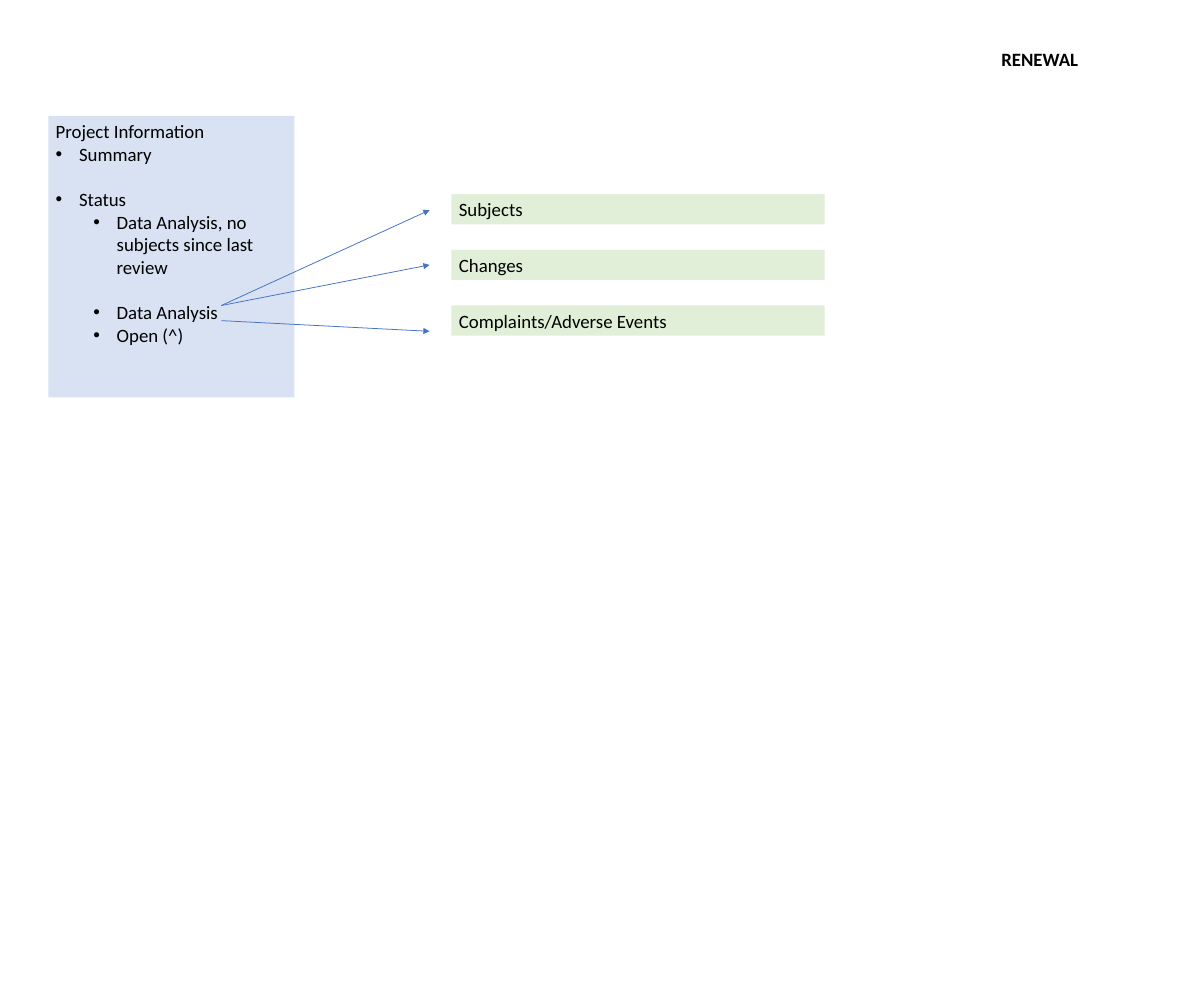
from lxml.etree import SubElement
from pptx import Presentation
from pptx.dml.color import RGBColor
from pptx.enum.shapes import MSO_CONNECTOR, MSO_SHAPE
from pptx.enum.text import MSO_ANCHOR, MSO_AUTO_SIZE, PP_ALIGN
from pptx.oxml.ns import qn
from pptx.util import Cm, Pt

THEME = {
    "font": "Calibri",
    "size": 18,
    "line_height": 22,
    "text": "000000",
    "project": "D8E2F3",
    "section": "E1EFD8",
    "arrow": "4472C4",
}

TITLE = "RENEWAL"
# text, bullet level (None = no bullet), one line of space above
PROJECT = [
    ("Project Information", None, False),
    ("Summary", 0, False),
    ("Status", 0, True),
    ("Data Analysis, no subjects since last review", 1, False),
    ("Data Analysis", 1, True),
    ("Open (^)", 1, False),
]
SECTIONS = ["Subjects", "Changes", "Complaints/Adverse Events"]

# All lengths in centimetres
SLIDE = (40.64, 33.78)
TITLE_BOX = (33.55, 1.47, 3.12, 1.02)
PROJECT_BOX = (1.63, 3.91, 8.31, 9.5)
SECTION_BOX = (15.24, 6.55, 12.6, 1.02)
SECTION_STEP = 1.88
ARROW_X = (7.47, 14.5)
ARROW_Y = [(10.31, 7.09), (10.31, 8.94), (10.82, 11.18)]
HANGING, LEVEL_INDENT = 0.79, 1.27


def color(name):
    return RGBColor.from_string(THEME[name])


def add_bullet(p, level):
    p.level = level
    pPr = p._p.get_or_add_pPr()
    pPr.set("marL", str(Cm(HANGING + level * LEVEL_INDENT)))
    pPr.set("indent", str(-Cm(HANGING)))
    SubElement(pPr, qn("a:buFont"), typeface="Arial")
    SubElement(pPr, qn("a:buChar"), char="•")


def write(p, text, bold=False, level=None, gap=False):
    p.alignment = PP_ALIGN.LEFT
    p.space_before = Pt(THEME["line_height"] if gap else 0)
    if level is not None:
        add_bullet(p, level)
    r = p.add_run()
    r.text = text
    r.font.name = THEME["font"]
    r.font.size = Pt(THEME["size"])
    r.font.bold = bold
    r.font.color.rgb = color("text")


def prepare_frame(tf, wrap=True):
    tf.word_wrap = wrap
    tf.auto_size = MSO_AUTO_SIZE.NONE
    tf.vertical_anchor = MSO_ANCHOR.TOP
    tf.margin_left = tf.margin_right = Cm(0.25)
    tf.margin_top = tf.margin_bottom = Cm(0.13)


def add_title(s):
    sp = s.shapes.title
    sp.left, sp.top, sp.width, sp.height = map(Cm, TITLE_BOX)
    prepare_frame(sp.text_frame, wrap=False)
    write(sp.text_frame.paragraphs[0], TITLE, bold=True)


def add_box(s, box, fill, lines):
    sp = s.shapes.add_shape(MSO_SHAPE.RECTANGLE, *map(Cm, box))
    sp.shadow.inherit = False
    sp.fill.solid()
    sp.fill.fore_color.rgb = color(fill)
    sp.line.fill.background()
    tf = sp.text_frame
    prepare_frame(tf)
    for i, (text, level, gap) in enumerate(lines):
        p = tf.add_paragraph() if i else tf.paragraphs[0]
        write(p, text, level=level, gap=gap)


def add_arrow(s, y1, y2):
    x1, x2 = ARROW_X
    line = s.shapes.add_connector(MSO_CONNECTOR.STRAIGHT, *map(Cm, (x1, y1, x2, y2)))
    line.line.color.rgb = color("arrow")
    line.line.width = Pt(0.75)
    SubElement(line.line._get_or_add_ln(), qn("a:tailEnd"), type="triangle")
    SubElement(line._element.spPr, qn("a:effectLst"))


def main():
    prs = Presentation()
    prs.slide_width, prs.slide_height = map(Cm, SLIDE)
    s = prs.slides.add_slide(prs.slide_layouts[5])
    add_title(s)
    add_box(s, PROJECT_BOX, "project", PROJECT)
    x, y, w, h = SECTION_BOX
    for i, name in enumerate(SECTIONS):
        add_box(s, (x, y + i * SECTION_STEP, w, h), "section", [(name, None, False)])
    for y1, y2 in ARROW_Y:
        add_arrow(s, y1, y2)
    prs.save("out.pptx")


if __name__ == "__main__":
    main()
